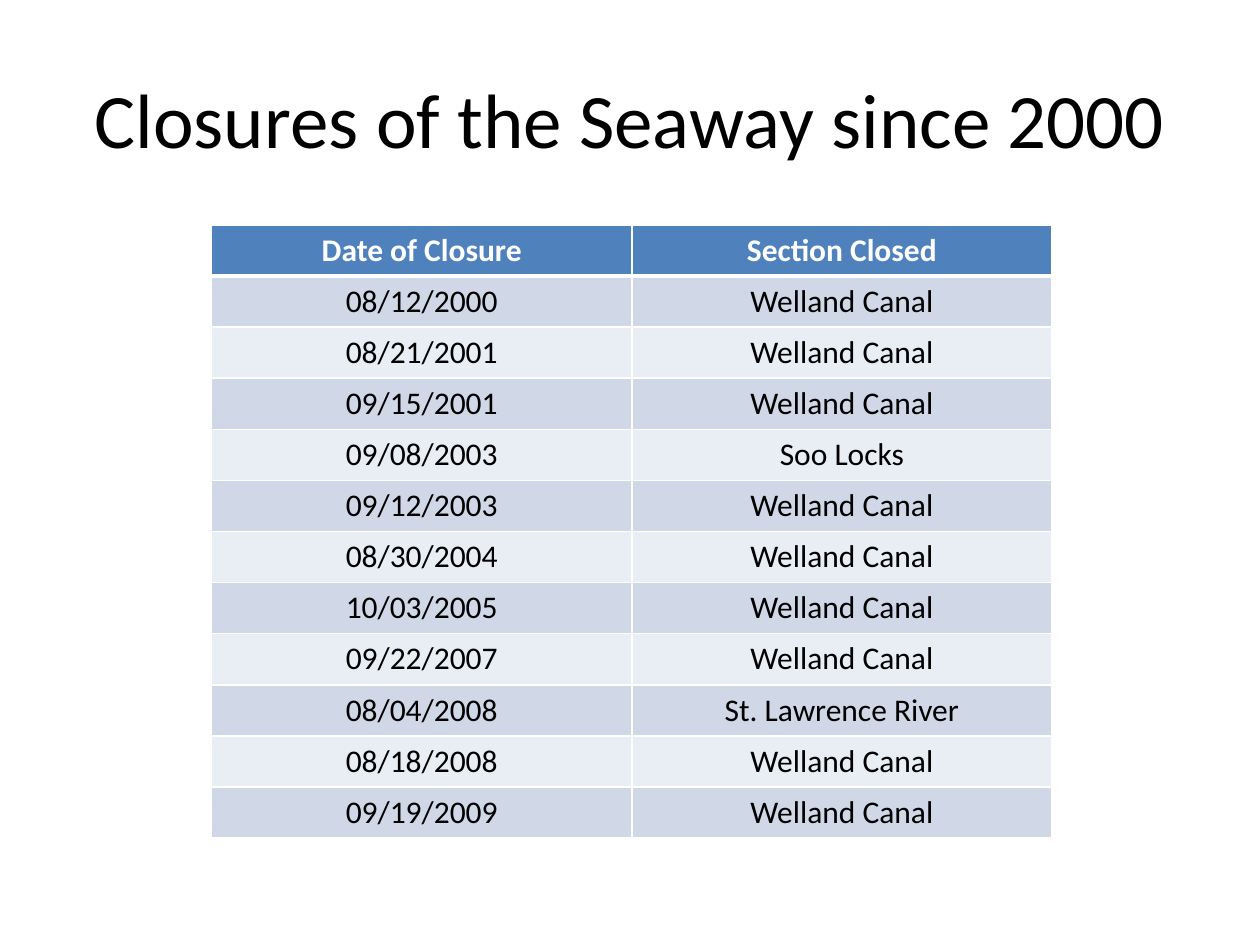
import pptx
import pptx.dml.color
import pptx.enum.text
import pptx.oxml.ns
import pptx.util
from lxml import etree

WIDTH, HEIGHT = pptx.util.Inches(10), pptx.util.Inches(7.5)
FONT = "Calibri"
COLORS = {
    "text": "000000",
    "header": "4F81BD",
    "header_text": "FFFFFF",
    "odd_row": "D0D8E8",
    "even_row": "E9EDF4",
    "border": "FFFFFF",
}
# Left, top, width and height as shares of the slide's size
TITLE_BOX = (0.05, 0.04, 0.9, 0.17)
TABLE_BOX = (0.168, 0.238, 0.667, 0.649)

HEADINGS = ("Date of Closure", "Section Closed")
CLOSURES = [
    ("08/12/2000", "Welland Canal"),
    ("08/21/2001", "Welland Canal"),
    ("09/15/2001", "Welland Canal"),
    ("09/08/2003", "Soo Locks"),
    ("09/12/2003", "Welland Canal"),
    ("08/30/2004", "Welland Canal"),
    ("10/03/2005", "Welland Canal"),
    ("09/22/2007", "Welland Canal"),
    ("08/04/2008", "St. Lawrence River"),
    ("08/18/2008", "Welland Canal"),
    ("09/19/2009", "Welland Canal"),
]


def color(name):
    return pptx.dml.color.RGBColor.from_string(COLORS[name])


def scale_box(box):
    """Turn shares of the slide into lengths."""
    return [round(share * side) for share, side in zip(box, (WIDTH, HEIGHT) * 2)]


def write_text(text_frame, text, size=18, bold=False, color_name="text"):
    paragraph = text_frame.paragraphs[0]
    paragraph.alignment = pptx.enum.text.PP_ALIGN.CENTER
    run = paragraph.add_run()
    run.text = text
    run.font.name = FONT
    run.font.size = pptx.util.Pt(size)
    run.font.bold = bold
    run.font.color.rgb = color(color_name)


def set_borders(cell, top=1, bottom=1):
    """Draw the four cell edges, with widths in points."""
    properties = cell._tc.get_or_add_tcPr()
    qualified = pptx.oxml.ns.qn
    for edge, points in (("L", 1), ("R", 1), ("T", top), ("B", bottom)):
        line = etree.SubElement(properties, qualified(f"a:ln{edge}"), w=str(pptx.util.Pt(points)))
        fill = etree.SubElement(line, qualified("a:solidFill"))
        etree.SubElement(fill, qualified("a:srgbClr"), val=COLORS["border"])


def add_title(slide, box, text):
    text_frame = slide.shapes.add_textbox(*scale_box(box)).text_frame
    text_frame.word_wrap = True
    text_frame.vertical_anchor = pptx.enum.text.MSO_ANCHOR.MIDDLE
    write_text(text_frame, text, size=44)


def add_closure_table(slide, box, headings, closures):
    rows = [headings, *closures]
    table = slide.shapes.add_table(len(rows), len(headings), *scale_box(box)).table
    for row_index, values in enumerate(rows):
        is_header = row_index == 0
        fill_name = "header" if is_header else "odd_row" if row_index % 2 else "even_row"
        for column_index, value in enumerate(values):
            cell = table.cell(row_index, column_index)
            set_borders(cell, top=3 if row_index == 1 else 1, bottom=3 if is_header else 1)
            cell.fill.solid()
            cell.fill.fore_color.rgb = color(fill_name)
            write_text(cell.text_frame, value, bold=is_header,
                       color_name="header_text" if is_header else "text")


def main():
    presentation = pptx.Presentation()
    presentation.slide_width, presentation.slide_height = WIDTH, HEIGHT
    slide = presentation.slides.add_slide(presentation.slide_layouts[6])
    add_title(slide, TITLE_BOX, "Closures of the Seaway since 2000")
    add_closure_table(slide, TABLE_BOX, HEADINGS, CLOSURES)
    presentation.save("out.pptx")


if __name__ == "__main__":
    main()
